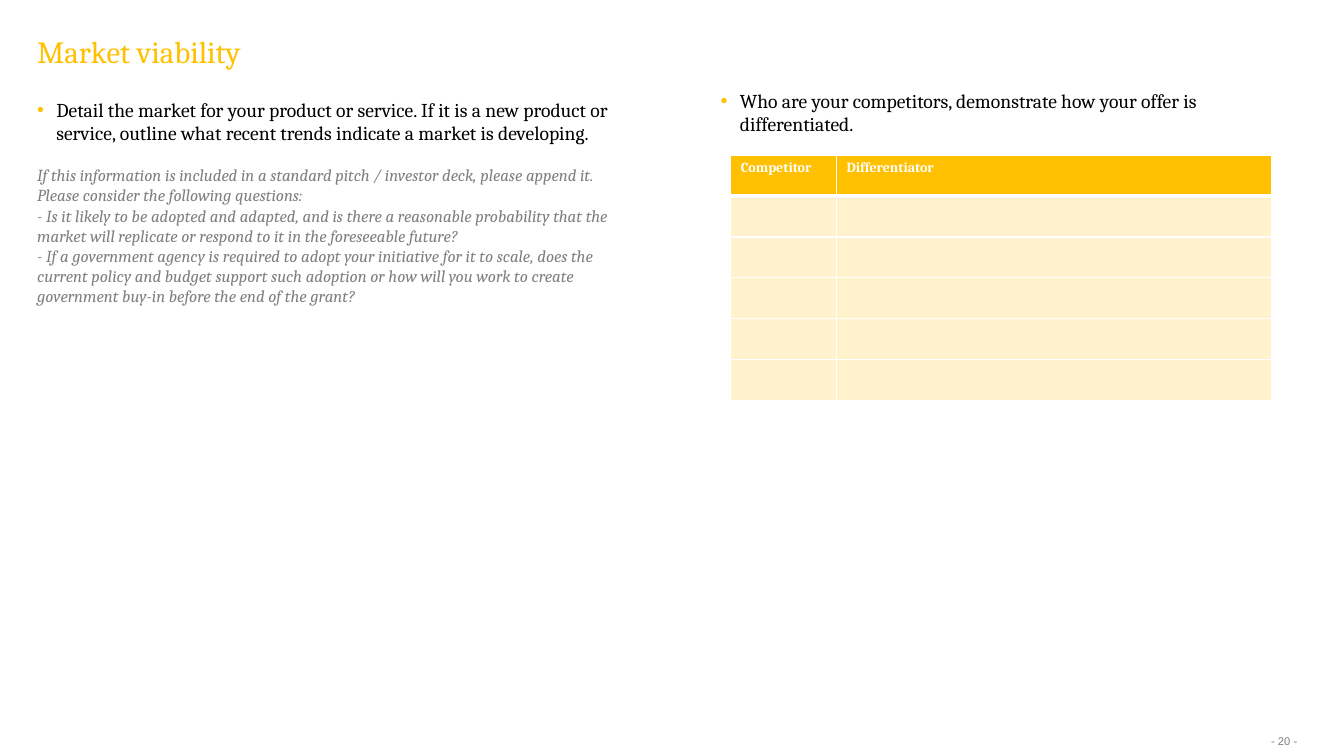
from dataclasses import dataclass

from lxml.etree import SubElement
from pptx import Presentation
from pptx.dml.color import RGBColor
from pptx.enum.text import MSO_ANCHOR as Anchor, MSO_AUTO_SIZE as AutoSize, PP_ALIGN as Align
from pptx.oxml.ns import qn
from pptx.util import Pt

TITLE = "Market viability"
MARKET_PROMPT = (
    "Detail the market for your product or service. If it is a new product or service, "
    "outline what recent trends indicate a market is developing."
)
GUIDANCE = [
    "If this information is included in a standard pitch / investor deck, please append it. "
    "Please consider the following questions:",
    "- Is it likely to be adopted and adapted, and is there a reasonable probability that the "
    "market will replicate or respond to it in the foreseeable future?",
    "- If a government agency is required to adopt your initiative for it to scale, does the "
    "current policy and budget support such adoption or how will you work to create "
    "government buy-in before the end of the grant?",
]
COMPETITOR_PROMPT = "Who are your competitors, demonstrate how your offer is differentiated."
TABLE_HEADERS = ["Competitor", "Differentiator"]
EMPTY_ROWS = 5
PAGE_NUMBER = "- 20 -"


@dataclass(frozen=True)
class Theme:
    font: str = "Cambria"
    number_font: str = "Arial"
    accent: str = "FFC000"
    pale: str = "FFF2CC"
    ink: str = "000000"
    muted: str = "7F7F7F"
    white: str = "FFFFFF"
    title_size: int = 22
    prompt_size: int = 14
    guidance_size: int = 12
    table_size: int = 10
    number_size: int = 8


THEME = Theme()
SLIDE_WIDTH, SLIDE_HEIGHT = 960, 540
MARGIN = 26.6
BODY_WIDTH, BODY_HEIGHT = 418.3, 399.6
RIGHT_LEFT = 514.8
BULLET_INDENT = 13.7
GUIDANCE_GAP = 14.4
TABLE_LEFT, TABLE_TOP = 522, 110.9
COLUMN_WIDTHS = [75.6, 311]
ROW_HEIGHT = 29.2


def write(paragraph, text, *, size, color, font=THEME.font, bold=False, italic=False,
          align=Align.LEFT, space_before=0):
    paragraph.alignment = align
    paragraph.space_before = Pt(space_before)
    run = paragraph.add_run()
    run.text = text
    run.font.name = font
    run.font.size = Pt(size)
    run.font.bold = bold
    run.font.italic = italic
    run.font.color.rgb = RGBColor.from_string(color)


def set_frame(shape, anchor=Anchor.TOP):
    frame = shape.text_frame
    frame.word_wrap = True
    frame.auto_size = AutoSize.NONE
    frame.vertical_anchor = anchor
    frame.margin_left = frame.margin_top = frame.margin_right = frame.margin_bottom = 0
    return frame


def add_bullet(paragraph):
    properties = paragraph._p.get_or_add_pPr()
    properties.set("marL", str(Pt(BULLET_INDENT)))
    properties.set("indent", str(-Pt(BULLET_INDENT)))
    color = SubElement(properties, qn("a:buClr"))
    SubElement(color, qn("a:srgbClr"), val=THEME.accent)
    SubElement(properties, qn("a:buFont"), typeface="Arial")
    SubElement(properties, qn("a:buChar"), char="•")


def add_prompt(slide, text, left, top):
    """Add a column that opens with a bulleted prompt; return its text frame."""
    box = slide.shapes.add_textbox(Pt(left), Pt(top), Pt(BODY_WIDTH), Pt(BODY_HEIGHT))
    frame = set_frame(box)
    paragraph = frame.paragraphs[0]
    write(paragraph, text, size=THEME.prompt_size, color=THEME.ink)
    add_bullet(paragraph)
    return frame


def set_borders(cell, **widths):
    """Draw white borders; widths are keyed by side in schema order: L, R, T, B."""
    properties = cell._tc.get_or_add_tcPr()
    for position, (side, width) in enumerate(widths.items()):
        line = SubElement(properties, qn(f"a:ln{side}"), w=str(Pt(width)))
        fill = SubElement(line, qn("a:solidFill"))
        SubElement(fill, qn("a:srgbClr"), val=THEME.white)
        properties.insert(position, line)


def add_competitor_table(slide):
    row_count = EMPTY_ROWS + 1
    table = slide.shapes.add_table(
        row_count, len(TABLE_HEADERS), Pt(TABLE_LEFT), Pt(TABLE_TOP),
        Pt(sum(COLUMN_WIDTHS)), Pt(ROW_HEIGHT * row_count),
    ).table
    table.horz_banding = False
    for column, width in zip(table.columns, COLUMN_WIDTHS):
        column.width = Pt(width)
    for row_index, row in enumerate(table.rows):
        row.height = Pt(ROW_HEIGHT)
        is_header = row_index == 0
        for cell, header in zip(row.cells, TABLE_HEADERS):
            cell.fill.solid()
            cell.fill.fore_color.rgb = RGBColor.from_string(
                THEME.accent if is_header else THEME.pale)
            set_borders(cell, L=1, R=1, T=3 if row_index == 1 else 1, B=3 if is_header else 1)
            if is_header:
                write(cell.text_frame.paragraphs[0], header, size=THEME.table_size,
                      color=THEME.white, bold=True)


def main():
    presentation = Presentation()
    presentation.slide_width, presentation.slide_height = Pt(SLIDE_WIDTH), Pt(SLIDE_HEIGHT)
    slide = presentation.slides.add_slide(presentation.slide_layouts[5])

    title = slide.shapes.title
    title.left, title.top = Pt(MARGIN), Pt(MARGIN)
    title.width, title.height = Pt(SLIDE_WIDTH - 2 * MARGIN), Pt(23.8)
    heading = set_frame(title).paragraphs[0]
    heading.line_spacing = 0.9
    write(heading, TITLE, size=THEME.title_size, color=THEME.accent)

    market = add_prompt(slide, MARKET_PROMPT, MARGIN, 69.8)
    for index, text in enumerate(GUIDANCE):
        write(market.add_paragraph(), text, size=THEME.guidance_size, color=THEME.muted,
              italic=True, space_before=GUIDANCE_GAP if index == 0 else 0)

    add_prompt(slide, COMPETITOR_PROMPT, RIGHT_LEFT, 63.4)
    add_competitor_table(slide)

    number = slide.shapes.add_textbox(Pt(882.7), Pt(524.2), Pt(51.1), Pt(10.8))
    number_frame = set_frame(number, Anchor.MIDDLE)
    number_frame.margin_left = number_frame.margin_right = Pt(7.2)
    write(number_frame.paragraphs[0], PAGE_NUMBER, size=THEME.number_size,
          color=THEME.muted, font=THEME.number_font, align=Align.RIGHT)

    presentation.save("out.pptx")


if __name__ == "__main__":
    main()
